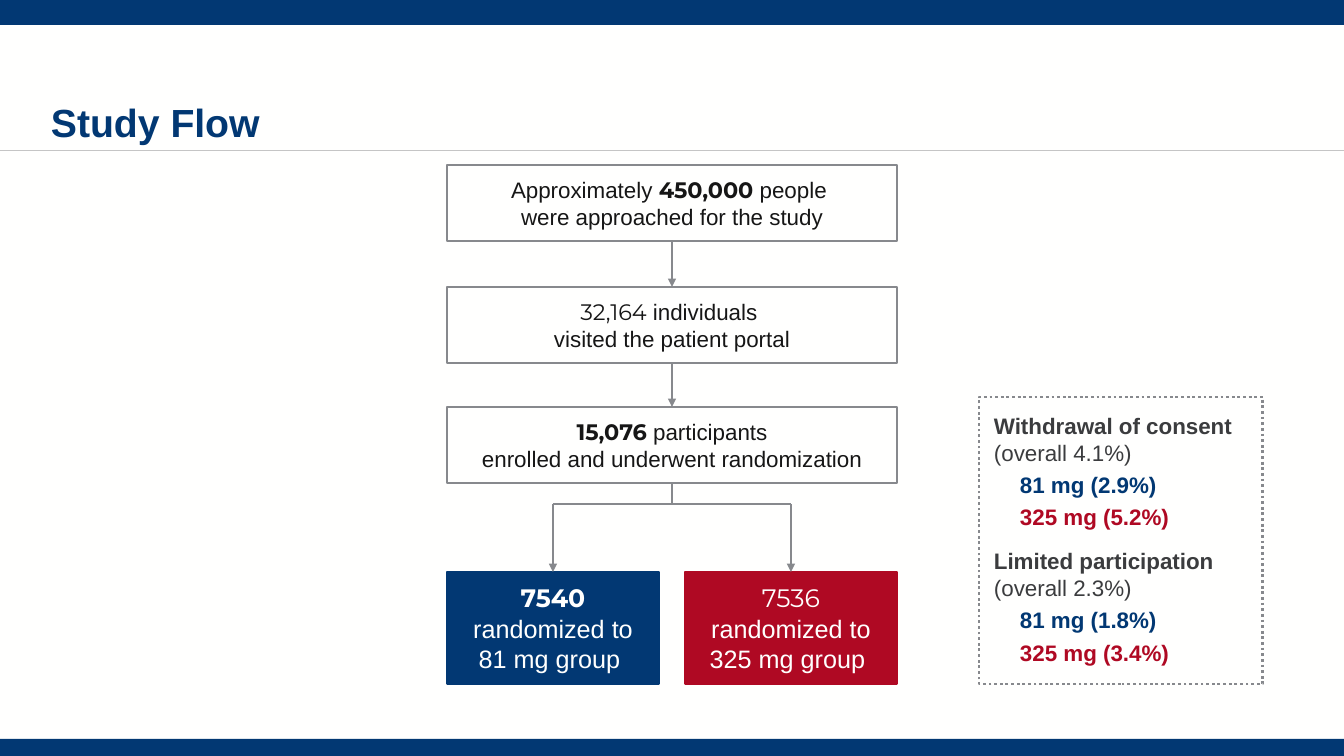
from dataclasses import dataclass
from typing import Optional

import pptx
import pptx.dml.color
import pptx.enum.dml
import pptx.enum.shapes
import pptx.enum.text
import pptx.oxml.xmlchemy
import pptx.util
from lxml import etree
from pptx.oxml import ns

EMU_PER_PX = 914400 / 100.8
WIDTH, HEIGHT = 1344, 756
NAVY, RED, GRAY, WHITE = "023873", "AF0923", "87898D", "FFFFFE"
INK, CHARCOAL, RULE = "161616", "3B3C3E", "C5C5C5"
BODY, FIGURES = "Arial", "Montserrat"
CENTER = pptx.enum.text.PP_ALIGN.CENTER
LEFT = pptx.enum.text.PP_ALIGN.LEFT
TOP = pptx.enum.text.MSO_ANCHOR.TOP
MIDDLE = pptx.enum.text.MSO_ANCHOR.MIDDLE
BOTTOM = pptx.enum.text.MSO_ANCHOR.BOTTOM
SIDE_TOP, SIDE_BOTTOM = 0, 2


@dataclass(frozen=True)
class Span:
    text: str
    bold: bool = False
    font: str = BODY
    color: Optional[str] = None


@dataclass(frozen=True)
class Para:
    spans: tuple[Span, ...]
    indent: int = 0
    before: int = 0
    spacing: Optional[float] = None


@dataclass(frozen=True)
class Box:
    left: int
    top: int
    width: int
    height: int
    fill: str
    line: Optional[str] = None

    @property
    def center(self) -> int:
        return self.left + self.width // 2

    @property
    def bottom(self) -> int:
        return self.top + self.height


def px(length: int) -> pptx.util.Emu:
    return pptx.util.Emu(round(length * EMU_PER_PX))


def rgb(color: str) -> pptx.dml.color.RGBColor:
    return pptx.dml.color.RGBColor.from_string(color)


def draw_box(slide, box: Box):
    shape = slide.shapes.add_shape(
        pptx.enum.shapes.MSO_SHAPE.RECTANGLE,
        px(box.left), px(box.top), px(box.width), px(box.height))
    shape.shadow.inherit = False
    shape.fill.solid()
    shape.fill.fore_color.rgb = rgb(box.fill)
    if box.line:
        shape.line.color.rgb = rgb(box.line)
        shape.line.width = pptx.util.Pt(2)
    else:
        shape.line.fill.background()
    return shape


def draw_line(slide, start: tuple[int, int], end: tuple[int, int], *,
              color: str = GRAY, width: float = 2, arrow: bool = False,
              source=None, target=None) -> None:
    line = slide.shapes.add_connector(
        pptx.enum.shapes.MSO_CONNECTOR.STRAIGHT,
        px(start[0]), px(start[1]), px(end[0]), px(end[1]))
    if source is not None:
        line.begin_connect(source, SIDE_BOTTOM)
    if target is not None:
        line.end_connect(target, SIDE_TOP)
    line.line.color.rgb = rgb(color)
    line.line.width = pptx.util.Pt(width)
    if arrow:
        outline = line.line._get_or_add_ln()
        etree.SubElement(outline, ns.qn("a:tailEnd"), type="triangle")
    etree.SubElement(line._element.spPr, ns.qn("a:effectLst"))


def write_text(shape, paras: list[Para], *, size: int, color: str,
               align=CENTER, anchor=MIDDLE, inset: Optional[int] = None) -> None:
    frame = shape.text_frame
    frame.word_wrap = True
    frame.vertical_anchor = anchor
    if inset is not None:
        frame.margin_left = frame.margin_right = px(inset)
        frame.margin_top = frame.margin_bottom = px(inset)
    for index, para in enumerate(paras):
        paragraph = frame.add_paragraph() if index else frame.paragraphs[0]
        paragraph.alignment = align
        if para.indent:
            paragraph.level = 1
            properties = paragraph._p.get_or_add_pPr()
            properties.set("marL", str(px(para.indent)))
            properties.set("indent", "0")
        if para.before:
            paragraph.space_before = pptx.util.Pt(para.before)
        if para.spacing:
            paragraph.line_spacing = para.spacing
        for span in para.spans:
            for row, text in enumerate(span.text.split("\n")):
                if row:
                    paragraph.add_line_break()
                run = paragraph.add_run()
                run.text = text
                run.font.name = span.font
                run.font.size = pptx.util.Pt(size)
                run.font.bold = span.bold
                run.font.color.rgb = rgb(span.color or color)


def outcome(heading: str, overall: str, low: str, high: str, before: int = 0) -> list[Para]:
    doses = [(f"81 mg ({low})", NAVY), (f"325 mg ({high})", RED)]
    return [Para((Span(heading + " ", bold=True), Span(f"(overall {overall})")), before=before)] + [
        Para((Span(dose, bold=True, color=color),), indent=26, before=5, spacing=0.95)
        for dose, color in doses]


STAGES = [
    (165, (Span("Approximately "), Span("450,000", bold=True, font=FIGURES),
           Span(" people \nwere approached for the study"))),
    (287, (Span("32,164", font=FIGURES),
           Span(" individuals \nvisited the patient portal"))),
    (407, (Span("15,076", bold=True, font=FIGURES),
           Span(" participants\nenrolled and underwent randomization"))),
]
GROUPS = [
    (447, NAVY, (Span("7540", bold=True, font=FIGURES),
                 Span(" randomized to 81 mg group "))),
    (685, RED, (Span("7536 ", font=FIGURES),
                Span("randomized to 325 mg group "))),
]
SPLIT_Y = 504


def main() -> None:
    deck = pptx.Presentation()
    deck.slide_width, deck.slide_height = px(WIDTH), px(HEIGHT)
    slide = deck.slides.add_slide(deck.slide_layouts[6])
    slide.background.fill.solid()
    slide.background.fill.fore_color.rgb = rgb(WHITE)

    # Page bands, rule and title
    draw_line(slide, (0, 151), (WIDTH, 151), color=RULE, width=0.75)
    draw_box(slide, Box(0, 0, WIDTH, 25, NAVY))
    draw_box(slide, Box(0, 739, WIDTH, 17, NAVY))
    title = slide.shapes.add_textbox(px(51), px(20), px(1123), px(126))
    write_text(title, [Para((Span("Study Flow", bold=True),), spacing=0.9)],
               size=28, color=NAVY, align=LEFT, anchor=BOTTOM, inset=0)

    # Recruitment stages, each joined to the one above
    above = above_shape = None
    for top, spans in STAGES:
        stage = Box(447, top, 450, 76, WHITE, GRAY)
        stage_shape = draw_box(slide, stage)
        write_text(stage_shape, [Para(spans)], size=16, color=INK)
        if above:
            draw_line(slide, (above.center, above.bottom), (stage.center, stage.top),
                      arrow=True, source=above_shape, target=stage_shape)
        above, above_shape = stage, stage_shape

    # Randomization split into the two dose groups
    draw_line(slide, (above.center, above.bottom), (above.center, SPLIT_Y), source=above_shape)
    branches = []
    for left, color, spans in GROUPS:
        group = Box(left, 572, 212, 112, color, color)
        group_shape = draw_box(slide, group)
        write_text(group_shape, [Para(spans)], size=18, color=WHITE)
        draw_line(slide, (group.center, SPLIT_Y), (group.center, group.top),
                  arrow=True, target=group_shape)
        branches.append(group.center)
    draw_line(slide, (branches[0], SPLIT_Y), (branches[1], SPLIT_Y))

    # Dotted panel of withdrawals
    panel = draw_box(slide, Box(979, 397, 284, 287, WHITE, GRAY))
    panel.line.dash_style = pptx.enum.dml.MSO_LINE.ROUND_DOT
    write_text(panel, outcome("Withdrawal of consent", "4.1%", "2.9%", "5.2%")
               + outcome("Limited participation", "2.3%", "1.8%", "3.4%", before=12),
               size=16, color=CHARCOAL, align=LEFT, anchor=TOP, inset=15)
    panel.text_frame.auto_size = pptx.enum.text.MSO_AUTO_SIZE.SHAPE_TO_FIT_TEXT

    deck.save("out.pptx")


if __name__ == "__main__":
    main()
